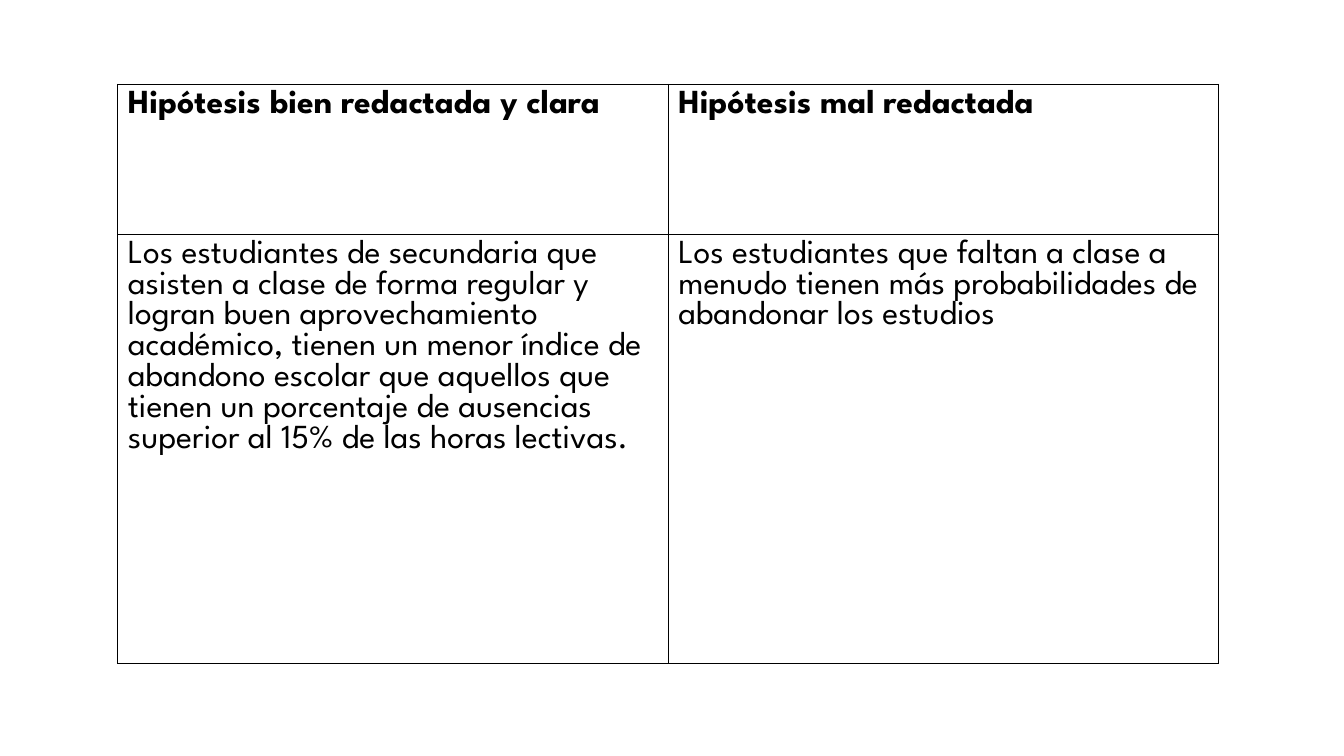
from lxml.etree import SubElement
from pptx import Presentation
from pptx.dml.color import RGBColor
from pptx.oxml.ns import qn
from pptx.util import Cm, Pt

ROWS = [
    ("Hipótesis bien redactada y clara", "Hipótesis mal redactada"),
    (
        "Los estudiantes de secundaria que asisten a clase de forma regular y "
        "logran buen aprovechamiento académico, tienen un menor índice de "
        "abandono escolar que aquellos que tienen un porcentaje de ausencias "
        "superior al 15% de las horas lectivas.",
        "Los estudiantes que faltan a clase a menudo tienen más "
        "probabilidades de abandonar los estudios",
    ),
]
TALL = [3.78, 10.8]
WIDE = 13.87
LEFT, TOP = 2.97, 2.13
FONT, SIZE = "League Spartan", 24
INK = "000000"


def color(code):
    return RGBColor.from_string(code)


def border(cell):
    props = cell._tc.get_or_add_tcPr()
    for side in ("a:lnL", "a:lnR", "a:lnT", "a:lnB"):
        line = SubElement(props, qn(side), w=str(Pt(1)))
        fill = SubElement(line, qn("a:solidFill"))
        SubElement(fill, qn("a:srgbClr"), val=INK)


def write(cell, text, bold):
    border(cell)
    cell.fill.background()
    run = cell.text_frame.paragraphs[0].add_run()
    run.text = text
    font = run.font
    font.name, font.size, font.bold = FONT, Pt(SIZE), bold
    font.color.rgb = color(INK)


def main():
    deck = Presentation()
    deck.slide_width, deck.slide_height = Cm(33.87), Cm(19.05)
    slide = deck.slides.add_slide(deck.slide_layouts[6])
    count = len(ROWS[0])
    frame = slide.shapes.add_table(
        len(ROWS), count, Cm(LEFT), Cm(TOP), Cm(WIDE * count), Cm(sum(TALL))
    )
    table = frame.table
    table.horz_banding = False
    for col in table.columns:
        col.width = Cm(WIDE)
    for row, tall, texts in zip(table.rows, TALL, ROWS):
        row.height = Cm(tall)
        for cell, text in zip(row.cells, texts):
            write(cell, text, texts is ROWS[0])
    deck.save("out.pptx")


if __name__ == "__main__":
    main()
